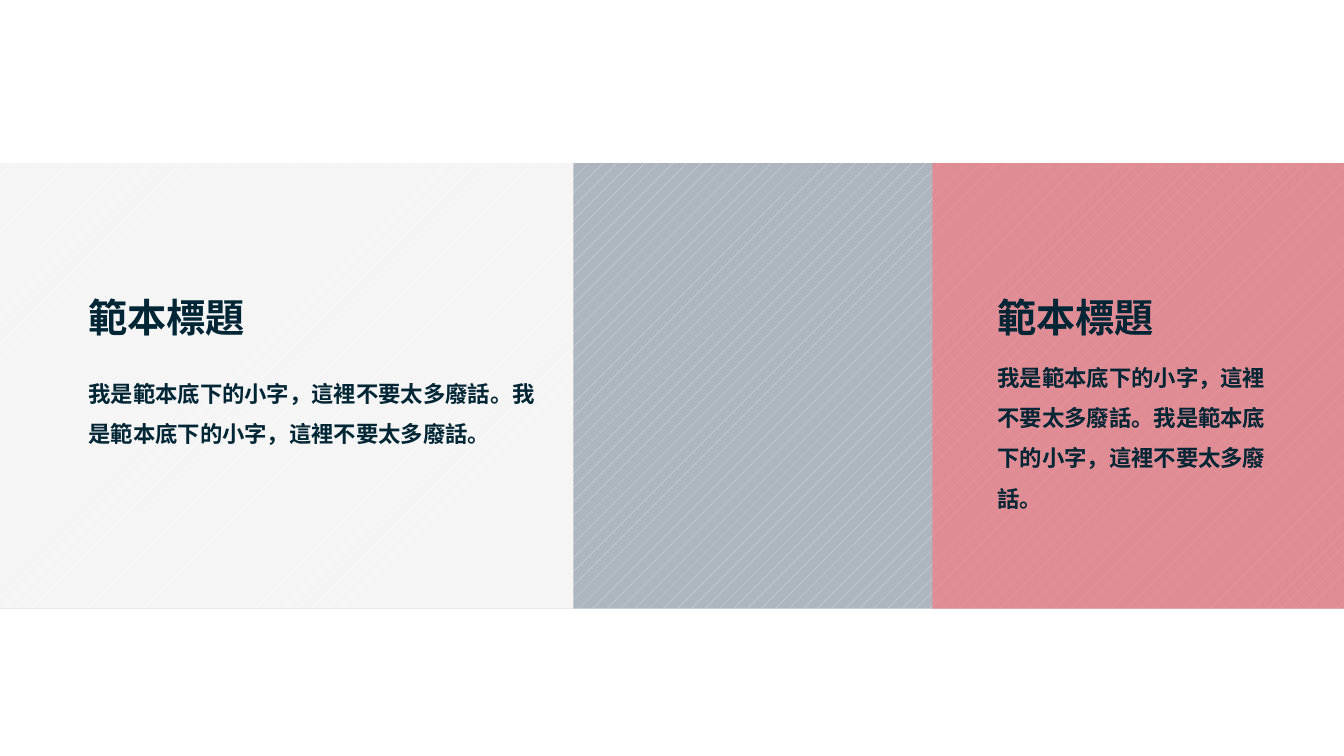
from pptx import Presentation
from pptx.dml.color import RGBColor
from pptx.enum.dml import MSO_PATTERN
from pptx.enum.shapes import MSO_SHAPE
from pptx.enum.text import MSO_ANCHOR
from pptx.oxml.ns import qn
from pptx.util import Cm, Pt
from lxml.etree import SubElement

FONT = "Noto Sans CJK TC"
INK = "002534"
TITLE = "範本標題"
BODY = "我是範本底下的小字，這裡不要太多廢話。" * 2


def color(code):
    return RGBColor.from_string(code)


def block(slide, box):
    shape = slide.shapes.add_shape(MSO_SHAPE.RECTANGLE, *map(Cm, box))
    shape.shadow.inherit = False
    shape.line.fill.background()
    return shape


def label(slide, box, text, size, anchor, space=None):
    frame = slide.shapes.add_textbox(*map(Cm, box)).text_frame
    frame.word_wrap = True
    frame.vertical_anchor = anchor
    par = frame.paragraphs[0]
    if space:
        par.line_spacing = space
    run = par.add_run()
    run.text = text
    font = run.font
    font.size, font.bold, font.name = Pt(size), True, FONT
    font.color.rgb = color(INK)
    # East Asian text takes its own typeface
    SubElement(font._element, qn("a:ea"), typeface=FONT)


def band(slide, box):
    fill = block(slide, box).fill
    fill.patterned()
    fill.pattern = MSO_PATTERN.PERCENT_5
    fill.fore_color.rgb = color("E4E6EA")
    fill.back_color.rgb = color("ADB5BF")


def panel(slide, box, tint, alpha, inset, width, rise, gap, depth):
    left, top, _, _ = box
    # Tinted sheet that lets the band show through
    fill = block(slide, box).fill
    fill.solid()
    fill.fore_color.rgb = color(tint)
    clr = fill._xPr.find(qn("a:solidFill"))[0]
    SubElement(clr, qn("a:alpha"), val=str(alpha * 1000))
    # Title sits on a shared base line, body hangs below it
    base = top + 4.6
    label(slide, (left + inset, base - rise, width, rise),
          TITLE, 28, MSO_ANCHOR.BOTTOM)
    label(slide, (left + inset, base + gap, width, depth),
          BODY, 16, MSO_ANCHOR.TOP, 1.5)


def main():
    deck = Presentation()
    deck.slide_width, deck.slide_height = Cm(33.87), Cm(19.05)
    slide = deck.slides.add_slide(deck.slide_layouts[6])
    top, high = 4.11, 11.23
    band(slide, (-0.02, top, 33.89, high))
    # Right panel, then left panel
    panel(slide, (23.5, top, 10.37, high), "F67B84", 70,
          inset=1.39, width=7.57, rise=0.96, gap=0, depth=2.16)
    panel(slide, (-0.02, top, 14.47, high), "FEFDFB", 90,
          inset=2, width=12.22, rise=2.36, gap=0.41, depth=2.59)
    deck.save("out.pptx")


if __name__ == "__main__":
    main()
